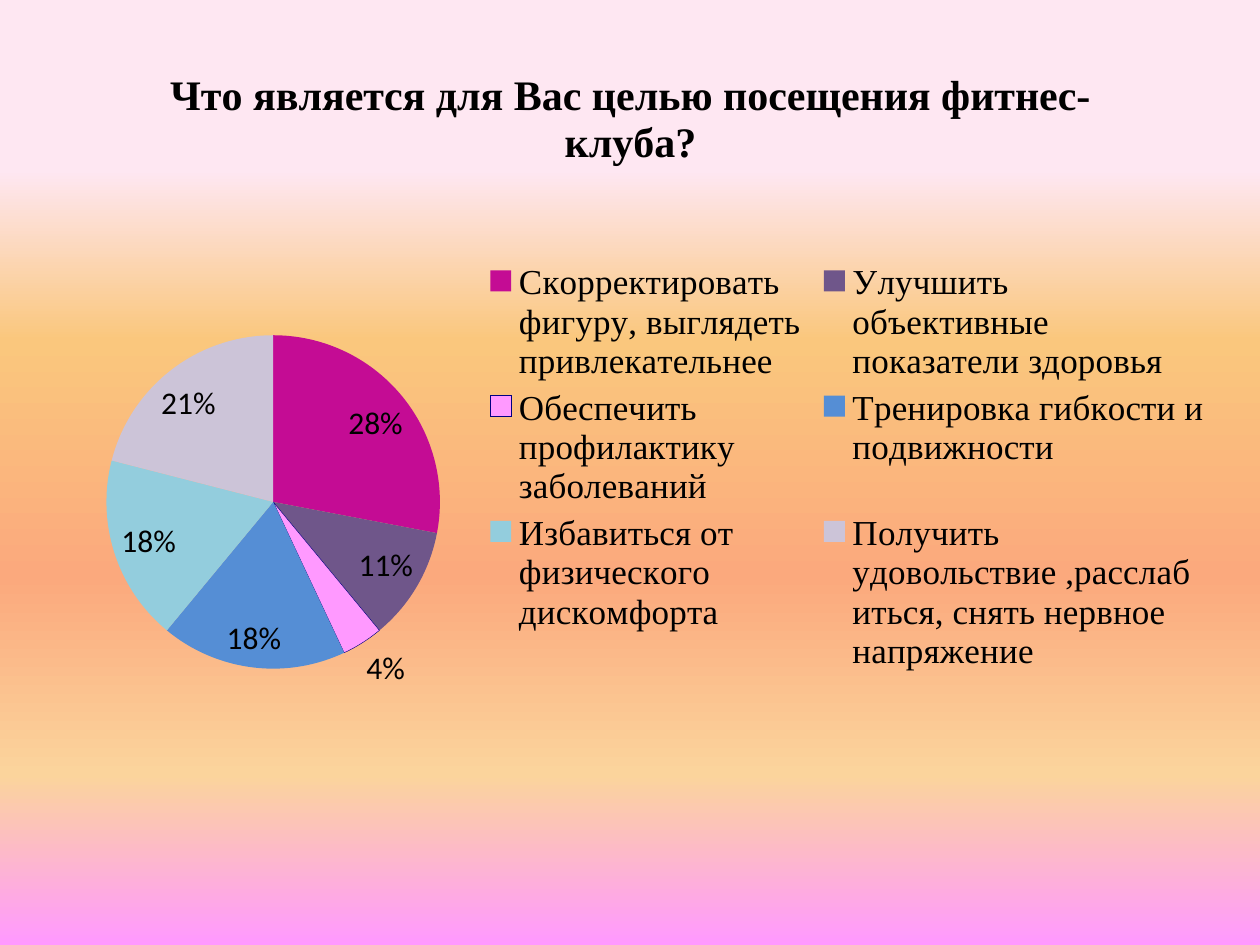
import pptx
import pptx.chart.data
import pptx.dml.color
import pptx.enum.chart
import pptx.oxml
import pptx.oxml.ns
import pptx.util

RGB = pptx.dml.color.RGBColor
ENUM = pptx.enum.chart
qn = pptx.oxml.ns.qn

BLACK = RGB(0, 0, 0)
NAVY = RGB(0, 0, 128)
PLUM = RGB(0xC4, 0x0C, 0x94)
GRAPE = RGB(0x6F, 0x56, 0x8A)
PINK = RGB(0xFF, 0x99, 0xFF)
BLUE = RGB(0x55, 0x8E, 0xD5)
AQUA = RGB(0x93, 0xCD, 0xDD)
LILAC = RGB(0xCC, 0xC4, 0xD8)
ROSE = RGB(0xFE, 0xE7, 0xF2)
GOLD = RGB(0xFA, 0xC7, 0x7D)
CORAL = RGB(0xFB, 0xA9, 0x7D)
SAND = RGB(0xFB, 0xD4, 0x9C)

PX = 914400 // 126
SERIF = "Times New Roman"
SANS = "Calibri"

SKY = [(0, ROSE), (18, ROSE), (36, GOLD), (61, CORAL), (82, SAND), (100, PINK)]
GOALS = [
    ("Скорректировать фигуру, выглядеть привлекательнее", 28, PLUM),
    ("Улучшить объективные показатели здоровья", 11, GRAPE),
    ("Обеспечить профилактику заболеваний", 4, PINK),
    ("Тренировка гибкости и подвижности", 18, BLUE),
    ("Избавиться от физического дискомфорта", 18, AQUA),
    ("Получить удовольствие ,расслабиться, снять нервное напряжение", 21, LILAC),
]
EDGED = 2  # the one slice with an outline


def style(font, face=SANS, size=18, bold=False, color=BLACK):
    font.name = face
    font.size = pptx.util.Pt(size)
    font.bold = bold
    font.color.rgb = color


def write(frame, text, **form):
    run = frame.paragraphs[0].add_run()
    run.text = text
    style(run.font, **form)


class Deck:
    def __init__(self, wide, high):
        self.show = pptx.Presentation()
        self.show.slide_width = wide * PX
        self.show.slide_height = high * PX
        self.slide = self.show.slides.add_slide(self.show.slide_layouts[6])

    def back(self, stops):
        self.slide.background.fill.gradient()
        grad = next(self.slide.element.iter(qn("a:gradFill")))
        for old in list(grad):
            grad.remove(old)
        marks = "".join(f'<a:gs pos="{at * 1000}"><a:srgbClr val="{tone}"/></a:gs>'
                        for at, tone in stops)
        space = pptx.oxml.ns.nsdecls("a")
        grad.append(pptx.oxml.parse_xml(f"<a:gsLst {space}>{marks}</a:gsLst>"))
        grad.append(pptx.oxml.parse_xml(f'<a:lin {space} ang="5400000" scaled="0"/>'))

    def pie(self, rows, left, top, wide, high):
        data = pptx.chart.data.CategoryChartData()
        data.categories = [name for name, _, _ in rows]
        data.add_series("Series 1", [value for _, value, _ in rows])
        box = [n * PX for n in (left, top, wide, high)]
        chart = self.slide.shapes.add_chart(ENUM.XL_CHART_TYPE.PIE, *box, data).chart
        style(chart.font)
        plot = chart.plots[0]
        plot.vary_by_categories = True
        for i, (_, _, tone) in enumerate(rows):
            fill = plot.series[0].points[i].format.fill
            fill.solid()
            fill.fore_color.rgb = tone
        return chart

    def place(self, chart, **spots):
        """Fix the plot at the given fractions of the chart."""
        area = next(chart.element.iter(qn("c:plotArea")))
        for old in area.findall(qn("c:layout")):
            area.remove(old)
        tags = "".join(f'<c:{k} val="{v}"/>' for k, v in spots.items())
        area.insert(0, pptx.oxml.parse_xml(
            f'<c:layout {pptx.oxml.ns.nsdecls("c")}><c:manualLayout>'
            '<c:layoutTarget val="inner"/><c:xMode val="edge"/><c:yMode val="edge"/>'
            f'{tags}</c:manualLayout></c:layout>'))

    def title(self, chart, text, **form):
        chart.has_title = True
        write(chart.chart_title.text_frame, text, **form)
        chart.chart_title.include_in_layout = False

    def legend(self, chart, **form):
        chart.has_legend = True
        chart.legend.position = ENUM.XL_LEGEND_POSITION.RIGHT
        chart.legend.include_in_layout = False
        style(chart.legend.font, **form)

    def labels(self, chart):
        marks = chart.plots[0].series[0].data_labels
        marks.show_value = False
        marks.show_percentage = True
        marks.number_format = "0%"
        marks.number_format_is_linked = False
        marks.position = ENUM.XL_LABEL_POSITION.BEST_FIT
        style(marks.font)

    def edge(self, chart, index, color):
        line = chart.plots[0].series[0].points[index].format.line
        line.color.rgb = color
        line.width = pptx.util.Pt(0.25)


def main():
    deck = Deck(1260, 945)
    deck.back(SKY)

    # Pie with its title, legend and labels
    chart = deck.pie(GOALS, 35, 36, 1191, 863)
    deck.title(chart, "Что является для Вас целью посещения фитнес-клуба?",
               face=SERIF, size=24, bold=True)
    deck.legend(chart, face=SERIF, size=20)
    deck.labels(chart)
    deck.edge(chart, EDGED, NAVY)
    deck.place(chart, x=0.06, y=0.34, w=0.28, h=0.4)

    deck.show.save("out.pptx")


if __name__ == "__main__":
    main()
